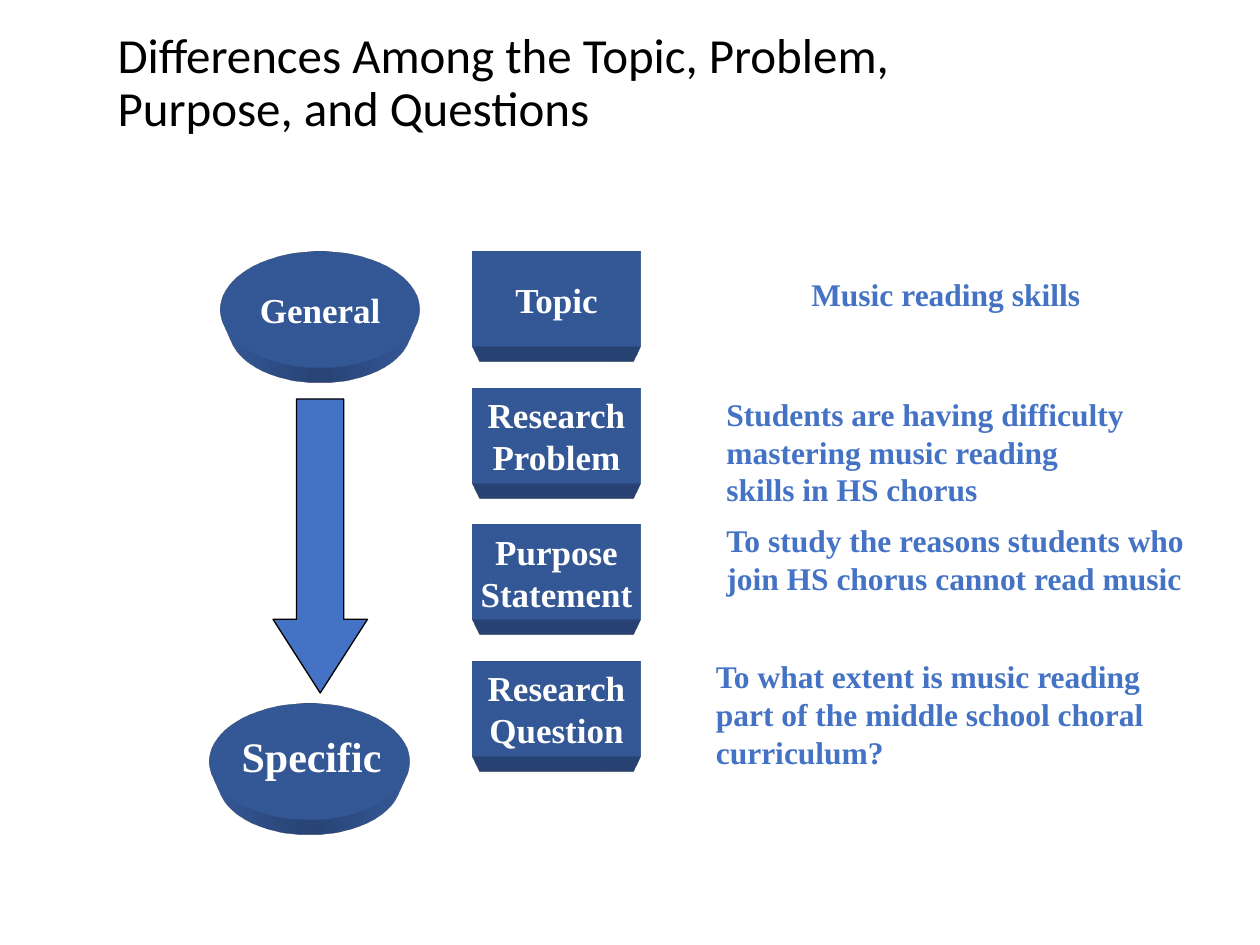
from lxml.etree import fromstring
from pptx import Presentation
from pptx.dml.color import RGBColor
from pptx.enum.shapes import MSO_SHAPE
from pptx.enum.text import MSO_ANCHOR, PP_ALIGN
from pptx.util import Pt

COLORS = {"blue": "4472C4", "black": "000000", "white": "FFFFFF"}
SERIF = "Times New Roman"
TITLE = "Differences Among the Topic, Problem, \vPurpose, and Questions"

STEPS = ["Topic", "Research\nProblem", "Purpose\nStatement", "Research\nQuestion"]
STEP_BOX = (270, 144, 96, 54)
STEP_GAP = 78

# text, (left, top, width, height), wrap
NOTES = [
    ("Music reading skills", (456.5, 153.4, 170, 29), False),
    ("Students are having difficulty mastering music reading skills in HS chorus",
     (408, 222, 246, 73), True),
    ("To study the reasons students who join HS chorus cannot read music",
     (408, 294, 288, 51), True),
    ("To what extent is music reading part of the middle school choral curriculum?",
     (402, 372, 288, 73), True),
]

DEPTH = [
    '<a:scene3d xmlns:a="http://schemas.openxmlformats.org/drawingml/2006/main">'
    '<a:camera prst="legacyPerspectiveBottom"/>'
    '<a:lightRig rig="legacyFlat3" dir="t"/></a:scene3d>',
    '<a:sp3d xmlns:a="http://schemas.openxmlformats.org/drawingml/2006/main" '
    'extrusionH="887400" prstMaterial="legacyMatte"><a:extrusionClr>'
    f'<a:srgbClr val="{COLORS["blue"]}"/></a:extrusionClr></a:sp3d>',
]


def rgb(name):
    return RGBColor.from_string(COLORS[name])


def write(shape, text, size=20, font=SERIF, color="white", bold=True,
          align=None, anchor=MSO_ANCHOR.MIDDLE, wrap=False, space=None):
    frame = shape.text_frame
    frame.text = text
    frame.word_wrap = wrap
    frame.vertical_anchor = anchor
    for para in frame.paragraphs:
        para.alignment = align
        para.line_spacing = space
        for run in para.runs:
            run.font.size = Pt(size)
            run.font.name = font
            run.font.bold = bold
            run.font.color.rgb = rgb(color)


def draw(slide, kind, box, deep=True):
    """Add a blue shape, either extruded downward or outlined in black."""
    shape = slide.shapes.add_shape(kind, *map(Pt, box))
    shape.shadow.inherit = False
    shape.fill.solid()
    shape.fill.fore_color.rgb = rgb("blue")
    if deep:
        shape.line.fill.background()
        for part in DEPTH:
            shape._element.spPr.append(fromstring(part))
    else:
        shape.line.color.rgb = rgb("black")
        shape.line.width = Pt(0.75)
    return shape


def label(slide, text, box, **style):
    note = slide.shapes.add_textbox(*map(Pt, box))
    write(note, text, anchor=MSO_ANCHOR.TOP, **style)


def main():
    deck = Presentation()
    deck.slide_width, deck.slide_height = Pt(720), Pt(540)
    slide = deck.slides.add_slide(deck.slide_layouts[5])

    title = slide.shapes.title
    title.left, title.top, title.width, title.height = map(Pt, (60, 12, 630, 72))
    write(title, TITLE, size=28, font="Calibri", color="black", bold=False,
          align=PP_ALIGN.LEFT, wrap=True, space=0.9)

    top = draw(slide, MSO_SHAPE.OVAL, (126, 144, 114, 66))
    write(top, "General", align=PP_ALIGN.CENTER)
    draw(slide, MSO_SHAPE.OVAL, (120, 402, 114, 66))
    label(slide, "Specific", (131, 414, 94.5, 36), size=24)

    arrow = draw(slide, MSO_SHAPE.DOWN_ARROW, (156, 228, 54, 168), deep=False)
    arrow.adjustments[0], arrow.adjustments[1] = 0.5, 0.78

    left, first, width, height = STEP_BOX
    for row, text in enumerate(STEPS):
        step = draw(slide, MSO_SHAPE.RECTANGLE,
                    (left, first + row * STEP_GAP, width, height))
        write(step, text, align=PP_ALIGN.CENTER)

    for text, box, wrap in NOTES:
        label(slide, text, box, size=18, color="blue", wrap=wrap)

    deck.save("out.pptx")


if __name__ == "__main__":
    main()
